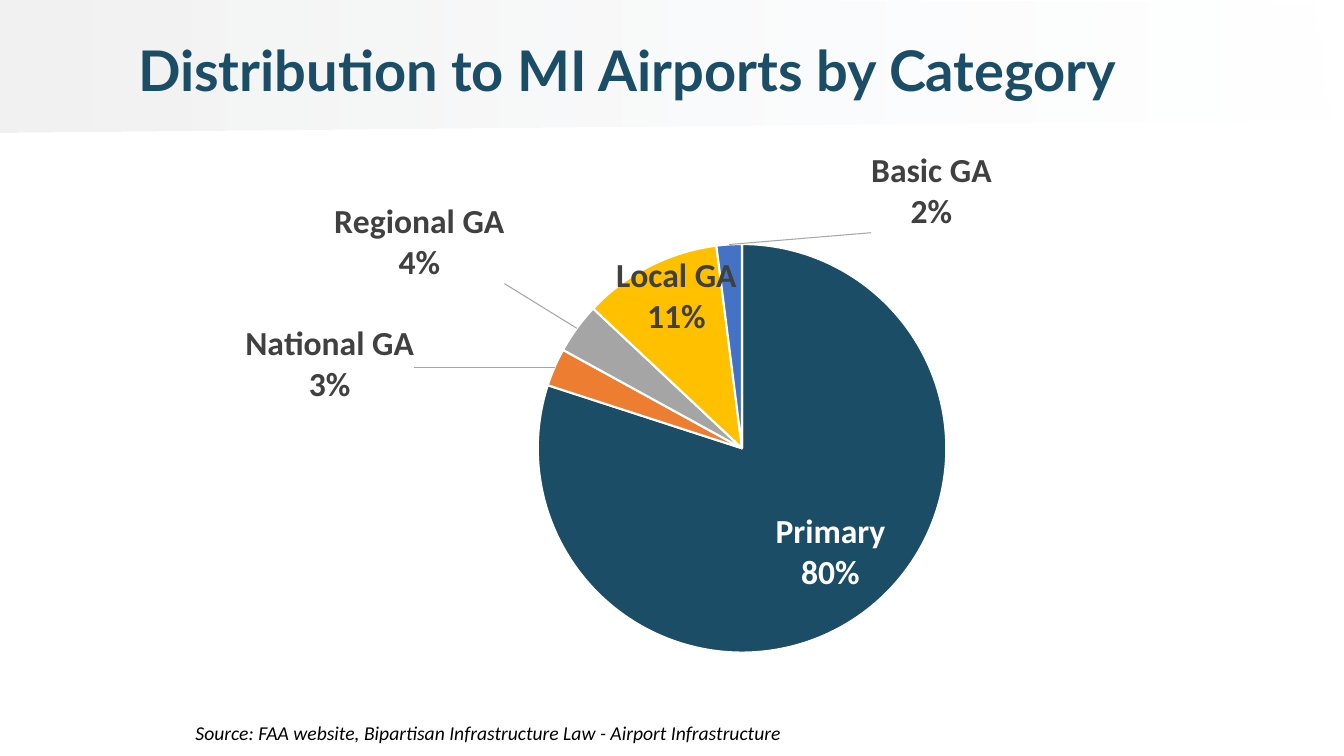
"""Build a slide with a pie chart of funding by airport category."""
from lxml import etree
from pptx import Presentation
from pptx.chart.data import CategoryChartData
from pptx.dml.color import RGBColor
from pptx.enum.chart import XL_CHART_TYPE, XL_LABEL_POSITION
from pptx.enum.text import MSO_ANCHOR, MSO_AUTO_SIZE, PP_ALIGN
from pptx.oxml import parse_xml
from pptx.oxml.ns import nsdecls, qn
from pptx.util import Pt

PIE = XL_CHART_TYPE.PIE
BEST_FIT = XL_LABEL_POSITION.BEST_FIT
MIDDLE = MSO_ANCHOR.MIDDLE
GROW = MSO_AUTO_SIZE.SHAPE_TO_FIT_TEXT
LEFT = PP_ALIGN.LEFT
TITLE_ONLY = 5
NAVY = "1C4D66"
CATEGORIES = [
    ("Primary", 80, NAVY, "FFFFFF", -0.08, -0.18),
    ("National GA", 3, "ED7D31", "404040", -0.12, 0.07),
    ("Regional GA", 4, "A5A5A5", "404040", -0.06, -0.07),
    ("Local GA", 11, "FFC000", "404040", 0.08, 0.13),
    ("Basic GA", 2, "4472C4", "404040", 0.18, -0.01),
]


def color(value):
    return RGBColor.from_string(value)


def manual_layout(**values):
    items = "".join(f'<c:{name} val="{value}"/>' for name, value in values.items())
    return parse_xml(f'<c:layout {nsdecls("c")}><c:manualLayout>{items}</c:manualLayout></c:layout>')


presentation = Presentation()
presentation.slide_width = Pt(960)
presentation.slide_height = Pt(540)
slide = presentation.slides.add_slide(presentation.slide_layouts[TITLE_ONLY])
shapes = slide.shapes

builder = shapes.build_freeform(939, 1.5, scale=Pt(1))
builder.add_line_segments([(445, 0), (0, 0), (0, 95), (949.7, 85.7)], close=True)
band = builder.convert_to_shape()
band.shadow.inherit = False
band.line.fill.background()
band.fill.gradient()
band.fill.gradient_angle = 0
for stop, value in zip(band.fill.gradient_stops, ("F2F2F2", "F7FAFD")):
    stop.color.rgb = color(value)
fade = band._element.spPr.findall(".//" + qn("a:srgbClr"))[-1]
etree.SubElement(fade, qn("a:alpha"), val="4000")
shapes._spTree.insert(2, band._element)

title = shapes.title
title.left, title.top, title.width, title.height = Pt(91.4), Pt(28.8), Pt(804.2), Pt(46.8)
frame = title.text_frame
frame.text = "Distribution to MI Airports by Category"
frame.vertical_anchor = MIDDLE
frame.auto_size = MSO_AUTO_SIZE.NONE
paragraph = frame.paragraphs[0]
paragraph.alignment = LEFT
paragraph.line_spacing = 0.9
font = paragraph.runs[0].font
font.name, font.size, font.bold = "Lato", Pt(40), True
font.color.rgb = color(NAVY)

chart_data = CategoryChartData()
chart_data.categories = [category[0] for category in CATEGORIES]
chart_data.add_series("Series 1", [category[1] for category in CATEGORIES])
chart = shapes.add_chart(PIE, Pt(91.4), Pt(100.8), Pt(804.2), Pt(420.5), chart_data).chart
chart.has_title = False
chart.has_legend = False
chart.font.name, chart.font.size = "Calibri", Pt(10)
chart.font.color.rgb = color("000000")
plot_area = chart._chartSpace.find(".//" + qn("c:plotArea"))
for layout in plot_area.findall(qn("c:layout")):
    plot_area.remove(layout)
plot_area.insert(0, manual_layout(layoutTarget="inner", xMode="edge", yMode="edge",
                                  x=0.364, y=0.175, w=0.363, h=0.694))

plot = chart.plots[0]
plot.vary_by_categories = True
series = plot.series[0]
labels = series.data_labels
labels.show_value = False
labels.show_category_name = True
labels.show_percentage = True
labels.number_format = "0%"
labels.number_format_is_linked = False
labels.font.name, labels.font.size, labels.font.bold = "Calibri", Pt(24), True
labels.font.color.rgb = color("404040")

for index, (name, value, fill, text_color, x, y) in enumerate(CATEGORIES):
    point = series.points[index]
    point.format.fill.solid()
    point.format.fill.fore_color.rgb = color(fill)
    point.format.line.color.rgb = color("FFFFFF")
    point.format.line.width = Pt(1.5)
    label = point.data_label
    label.font.name, label.font.size, label.font.bold = "Calibri", Pt(24), True
    label.font.color.rgb = color(text_color)
    label.position = BEST_FIT

for element, category in zip(plot_area.iter(qn("c:dLbl")), CATEGORIES):
    element.insert(1, manual_layout(x=category[4], y=category[5]))
    for tag, shown in (("c:showVal", "0"), ("c:showCatName", "1"), ("c:showPercent", "1")):
        element.find(qn(tag)).set("val", shown)
    etree.SubElement(element, qn("c:separator")).text = "\n"

leader_flag = plot_area.find(".//" + qn("c:showLeaderLines"))
leader_flag.set("val", "1")
leader_flag.addnext(parse_xml(
    f'<c:leaderLines {nsdecls("c", "a")}><c:spPr><a:ln w="9525"><a:solidFill>'
    '<a:srgbClr val="A6A6A6"/></a:solidFill></a:ln></c:spPr></c:leaderLines>'))

source = shapes.add_textbox(Pt(132.5), Pt(511.2), Pt(440.6), Pt(24.5))
frame = source.text_frame
frame.word_wrap = False
frame.auto_size = GROW
frame.text = "Source: FAA website, Bipartisan Infrastructure Law - Airport Infrastructure"
font = frame.paragraphs[0].runs[0].font
font.name, font.size, font.italic = "Calibri", Pt(14), True
font.color.rgb = color("000000")

presentation.save("out.pptx")
